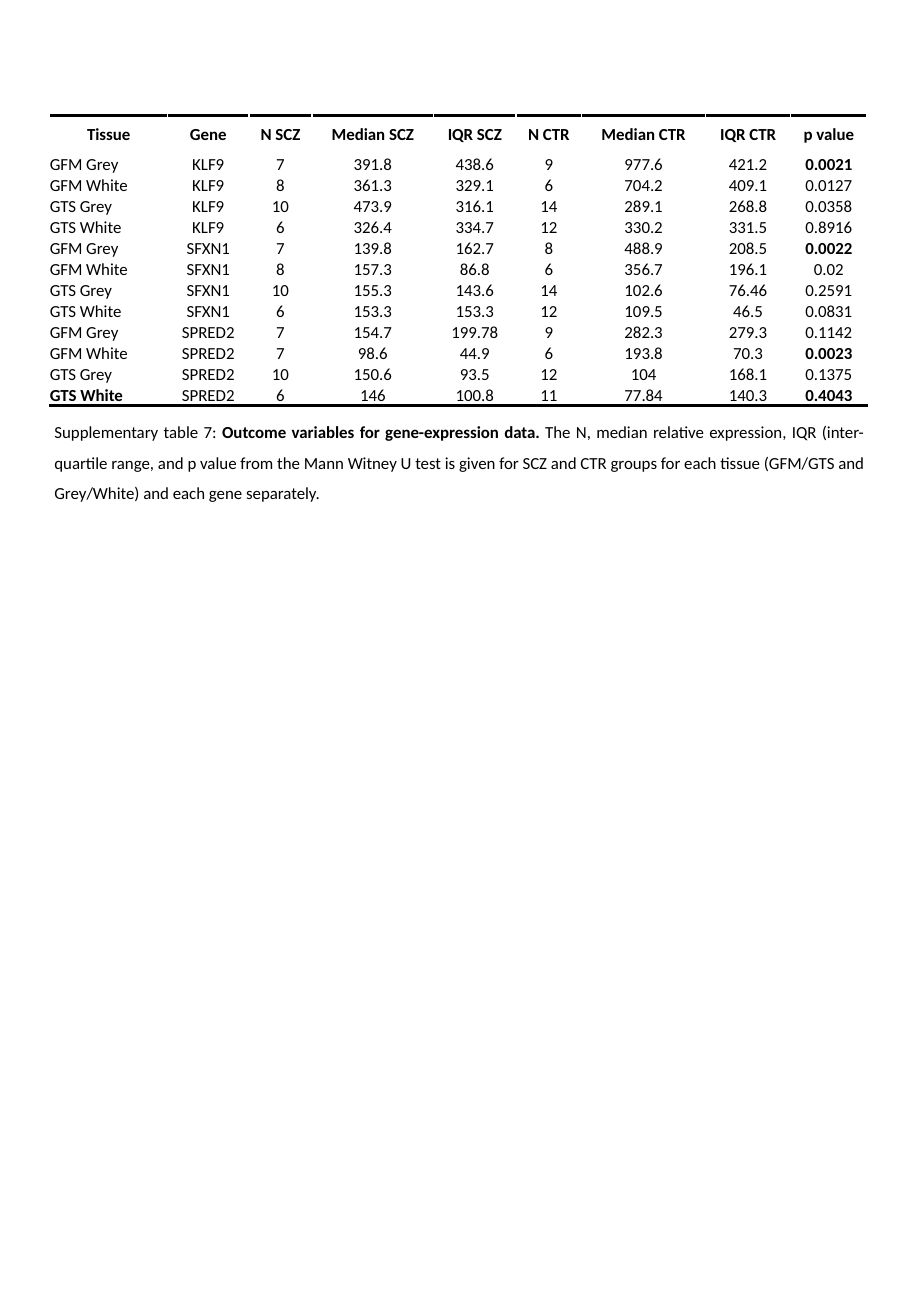
from lxml.etree import SubElement
from pptx import Presentation
from pptx.dml.color import RGBColor
from pptx.enum.text import MSO_ANCHOR, MSO_AUTO_SIZE, PP_ALIGN
from pptx.oxml.ns import qn
from pptx.util import Inches, Pt

COLORS = {"ink": "000000", "paper": "FFFFFF"}
HEADINGS = ["Tissue", "Gene", "N SCZ", "Median SCZ", "IQR SCZ",
            "N CTR", "Median CTR", "IQR CTR", "p value"]
COLUMN_WIDTHS = [0.97, 0.67, 0.52, 1, 0.68, 0.54, 1.02, 0.7, 0.63]
TISSUES = ["GFM Grey", "GFM White", "GTS Grey", "GTS White"]
MEASURES = {
    "KLF9": ["7 391.8 438.6 9 977.6 421.2 0.0021",
             "8 361.3 329.1 6 704.2 409.1 0.0127",
             "10 473.9 316.1 14 289.1 268.8 0.0358",
             "6 326.4 334.7 12 330.2 331.5 0.8916"],
    "SFXN1": ["7 139.8 162.7 8 488.9 208.5 0.0022",
              "8 157.3 86.8 6 356.7 196.1 0.02",
              "10 155.3 143.6 14 102.6 76.46 0.2591",
              "6 153.3 153.3 12 109.5 46.5 0.0831"],
    "SPRED2": ["7 154.7 199.78 9 282.3 279.3 0.1142",
               "7 98.6 44.9 6 193.8 70.3 0.0023",
               "10 150.6 93.5 12 104 168.1 0.1375",
               "6 146 100.8 11 77.84 140.3 0.4043"],
}
BOLD_P_VALUES = {"0.0021", "0.0022", "0.0023", "0.4043"}
CAPTION = [
    ("Supplementary table 7: ", False),
    ("Outcome variables for gene-expression data. ", True),
    ("The N, median relative expression, IQR (inter-quartile range, and p value "
     "from the Mann Witney U test is given for SCZ and CTR groups for each tissue "
     "(GFM/GTS and Grey/White) and each gene separately.", False),
]


def add_span(para, text, bold=False, size=10, color="ink"):
    span = para.add_run()
    span.text = text
    span.font.name = "Calibri"
    span.font.size = Pt(size)
    span.font.bold = bold
    span.font.color.rgb = RGBColor.from_string(COLORS[color])


def add_rule(cell, side, width=2):
    """Draw a black border on the top ("lnT") or bottom ("lnB") of a cell."""
    properties = cell._tc.get_or_add_tcPr()
    line = SubElement(properties, qn(f"a:{side}"), w=str(Pt(width)))
    fill = SubElement(line, qn("a:solidFill"))
    SubElement(fill, qn("a:srgbClr"), val=COLORS["ink"])
    properties.insert(0, line)


deck = Presentation()
deck.slide_width = Inches(7.5)
deck.slide_height = Inches(10.83)
page = deck.slides.add_slide(deck.slide_layouts[6])

# Caption below the table
box = page.shapes.add_textbox(Inches(0.35), Inches(3.34), Inches(6.86), Inches(0.83))
box.text_frame.word_wrap = True
box.text_frame.auto_size = MSO_AUTO_SIZE.SHAPE_TO_FIT_TEXT
para = box.text_frame.paragraphs[0]
para.alignment = PP_ALIGN.JUSTIFY
para.line_spacing = 1.5
para.space_after = Pt(8)
for text, bold in CAPTION:
    add_span(para, text, bold=bold)

# Gene expression table
rows = [HEADINGS]
for gene, lines in MEASURES.items():
    for tissue, line in zip(TISSUES, lines):
        rows.append([tissue, gene, *line.split()])
last_row = len(rows) - 1

table = page.shapes.add_table(len(rows), len(HEADINGS), Inches(0.41), Inches(0.95),
                              Inches(6.74), Inches(2.39)).table
table.first_row = False
table.horz_banding = False
for column, width in zip(table.columns, COLUMN_WIDTHS):
    column.width = Inches(width)

for row_index, values in enumerate(rows):
    is_header = row_index == 0
    table.rows[row_index].height = Inches(0.32 if is_header else 2.07 / last_row)
    for column_index, value in enumerate(values):
        cell = table.cell(row_index, column_index)
        cell.margin_left = cell.margin_right = cell.margin_top = cell.margin_bottom = 0
        cell.vertical_anchor = MSO_ANCHOR.MIDDLE
        cell.fill.solid()
        cell.fill.fore_color.rgb = RGBColor.from_string(COLORS["paper"])
        para = cell.text_frame.paragraphs[0]
        is_tissue = column_index == 0 and not is_header
        para.alignment = PP_ALIGN.LEFT if is_tissue else PP_ALIGN.CENTER
        is_last_tissue = is_tissue and row_index == last_row
        add_span(para, value, bold=is_header or is_last_tissue or value in BOLD_P_VALUES)
        if is_header:
            add_rule(cell, "lnT")
        elif row_index == last_row:
            add_rule(cell, "lnB")

deck.save("out.pptx")
